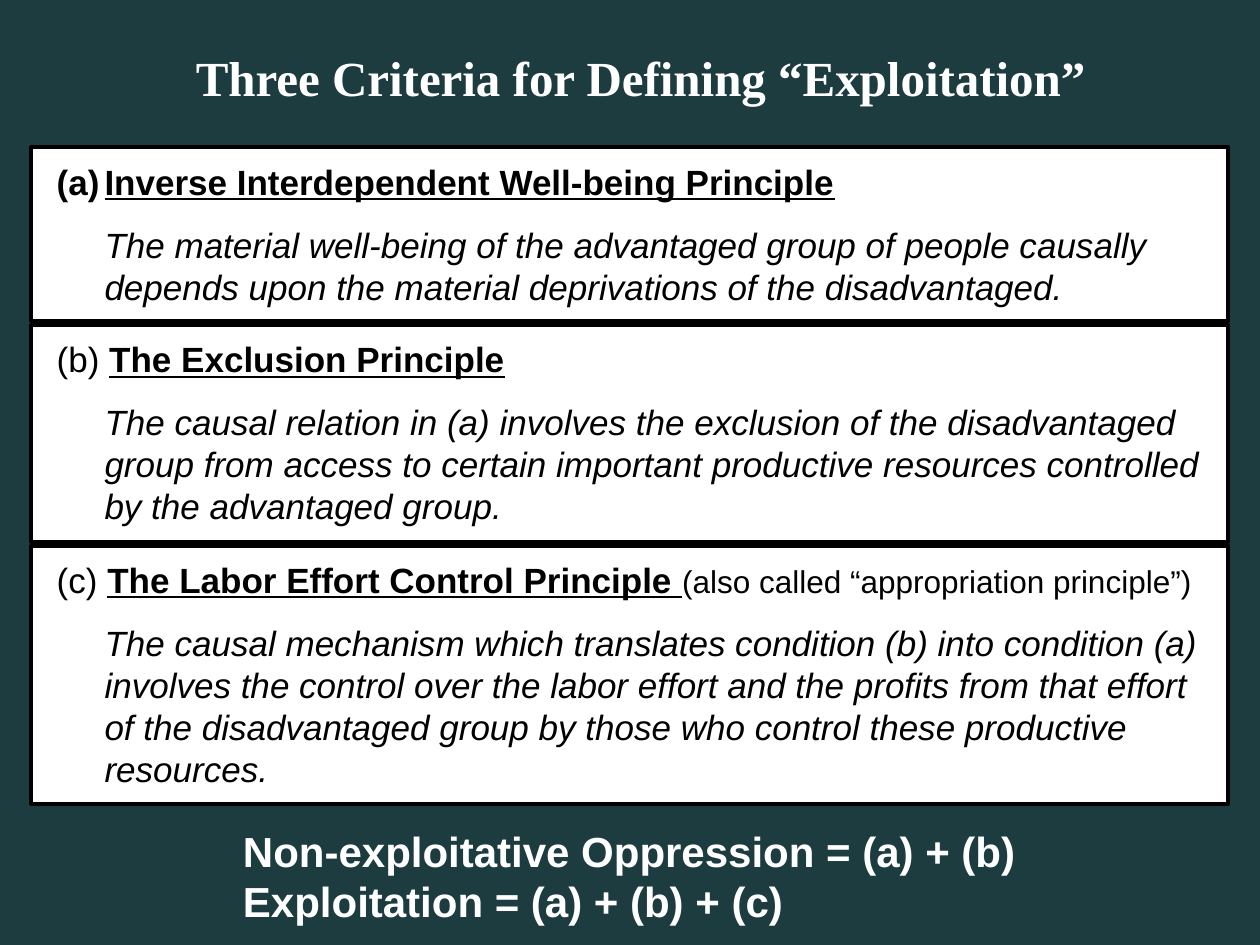
from lxml import etree
from pptx import Presentation
from pptx.dml.color import RGBColor
from pptx.enum.shapes import MSO_SHAPE
from pptx.enum.text import MSO_ANCHOR, MSO_AUTO_SIZE, PP_ALIGN
from pptx.oxml.ns import qn
from pptx.util import Inches, Pt

RECT = MSO_SHAPE.RECTANGLE
TOP = MSO_ANCHOR.TOP
GROW = MSO_AUTO_SIZE.SHAPE_TO_FIT_TEXT
LEFT, CENTER = PP_ALIGN.LEFT, PP_ALIGN.CENTER

TEAL = RGBColor(0x1C, 0x3C, 0x40)
WHITE = RGBColor(255, 255, 255)
BLACK = RGBColor(0, 0, 0)
HANG = 0.38

RULES = [
    (1.17, 1.38, "", "Inverse Interdependent Well-being Principle", "",
     "The material well-being of the advantaged group of people causally "
     "depends upon the material deprivations of the disadvantaged."),
    (2.58, 1.72, "(b) ", "The Exclusion Principle", "",
     "The causal relation in (a) involves the exclusion of the disadvantaged "
     "group from access to certain important productive resources controlled "
     "by the advantaged group."),
    (4.33, 2.05, "(c) ", "The Labor Effort Control Principle ",
     "(also called “appropriation principle”)",
     "The causal mechanism which translates condition (b) into condition (a) "
     "involves the control over the labor effort and the profits from that "
     "effort of the disadvantaged group by those who control these productive "
     "resources."),
]


def write(para, text, size=20, color=BLACK, face="Arial",
          bold=False, italic=False, under=False):
    run = para.add_run()
    run.text = text
    font = run.font
    font.name, font.size = face, Pt(size)
    font.bold, font.italic, font.underline = bold, italic, under
    font.color.rgb = color


def indent(para, first):
    props = para._p.get_or_add_pPr()
    props.set("marL", str(Inches(HANG)))
    props.set("indent", str(Inches(first)))
    return props


def add_rule(slide, box, mark, name, note, body):
    panel = slide.shapes.add_shape(RECT, *map(Inches, box))
    panel.shadow.inherit = False
    panel.fill.solid()
    panel.fill.fore_color.rgb = WHITE
    panel.line.color.rgb = BLACK
    panel.line.width = Pt(2.25)
    frame = panel.text_frame
    frame.word_wrap = True
    frame.auto_size = GROW
    frame.vertical_anchor = TOP
    frame.margin_left = frame.margin_right = Inches(0.2)
    frame.margin_top = frame.margin_bottom = Inches(0.1)

    head = frame.paragraphs[0]
    head.alignment = LEFT
    head.space_after = Pt(12)
    props = indent(head, -HANG)
    if mark:
        write(head, mark)
    else:
        etree.SubElement(props, qn("a:buFontTx"))
        etree.SubElement(props, qn("a:buAutoNum"), type="alphaLcParenBoth")
    write(head, name, bold=True, under=True)
    if note:
        write(head, note, size=18)

    para = frame.add_paragraph()
    para.alignment = LEFT
    indent(para, 0)
    write(para, body, italic=True)


def add_label(slide, box, lines, align=LEFT, before=0, **style):
    frame = slide.shapes.add_textbox(*map(Inches, box)).text_frame
    frame.word_wrap = True
    frame.auto_size = GROW
    for i, line in enumerate(lines):
        para = frame.add_paragraph() if i else frame.paragraphs[0]
        para.alignment = align
        para.space_before = Pt(before)
        write(para, line, color=WHITE, bold=True, **style)


def main():
    deck = Presentation()
    deck.slide_width, deck.slide_height = Inches(10), Inches(7.5)
    slide = deck.slides.add_slide(deck.slide_layouts[6])
    fill = slide.background.fill
    fill.solid()
    fill.fore_color.rgb = TEAL

    for top, height, *words in RULES:
        add_rule(slide, (0.25, top, 9.5, height), *words)
    add_label(slide, (1.83, 6.5, 6.92, 0.91),
              ["Non-exploitative Oppression = (a) + (b)",
               "Exploitation = (a) + (b) + (c)"], size=24)
    add_label(slide, (0.67, 0.33, 8.83, 0.57),
              ["Three Criteria for Defining “Exploitation”"],
              align=CENTER, before=4, size=28, face="Times New Roman")
    deck.save("out.pptx")


if __name__ == "__main__":
    main()
